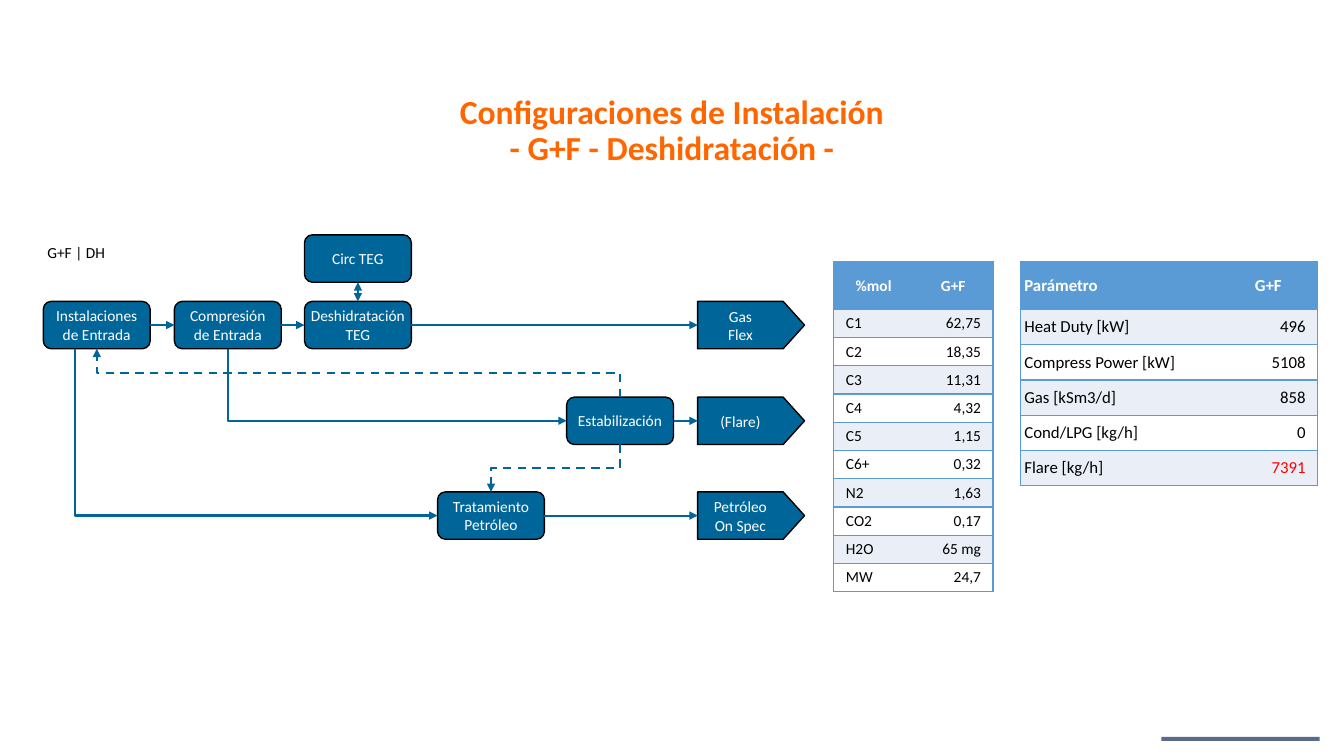
from dataclasses import dataclass

from lxml import etree
from pptx import Presentation
from pptx.dml.color import RGBColor
from pptx.enum.dml import MSO_LINE
from pptx.enum.shapes import MSO_CONNECTOR, MSO_SHAPE
from pptx.enum.text import MSO_ANCHOR, MSO_AUTO_SIZE, PP_ALIGN
from pptx.oxml.ns import qn
from pptx.util import Inches, Pt

PROCESS, FLAG = MSO_SHAPE.FLOWCHART_ALTERNATE_PROCESS, MSO_SHAPE.FLOWCHART_OFFPAGE_CONNECTOR
RECTANGLE = MSO_SHAPE.RECTANGLE
STRAIGHT, ELBOW = MSO_CONNECTOR.STRAIGHT, MSO_CONNECTOR.ELBOW
LEFT, CENTER, RIGHT = PP_ALIGN.LEFT, PP_ALIGN.CENTER, PP_ALIGN.RIGHT
MIDDLE, NO_FIT = MSO_ANCHOR.MIDDLE, MSO_AUTO_SIZE.NONE
DASH = MSO_LINE.DASH
TOP_SIDE, LEFT_SIDE, BOTTOM_SIDE, RIGHT_SIDE = range(4)


@dataclass(frozen=True)
class Theme:
    """Colours and type sizes of the slide."""
    font: str = "Calibri"
    title: str = "FF6600"
    teal: str = "006699"
    navy: str = "001C50"
    header: str = "5B9BD5"
    band: str = "EAEFF7"
    white: str = "FFFFFF"
    black: str = "000000"
    alert: str = "FF0000"
    title_size: int = 24
    body_size: int = 11
    parameter_size: int = 12


THEME = Theme()
BOX_WIDTH, BOX_HEIGHT = Inches(1.06), Inches(0.47)
MARGIN, WIDE_MARGIN = 0.04, 0.12
COMPOSITION = [("%mol", "G+F"), ("C1", "62,75"), ("C2", "18,35"), ("C3", "11,31"),
               ("C4", "4,32"), ("C5", "1,15"), ("C6+", "0,32"), ("N2", "1,63"),
               ("CO2", "0,17"), ("H2O", "65 mg"), ("MW", "24,7")]
PARAMETERS = [("Parámetro", "G+F"), ("Heat Duty [kW]", "496"), ("Compress Power [kW]", "5108"),
              ("Gas [kSm3/d]", "858"), ("Cond/LPG [kg/h]", "0"), ("Flare [kg/h]", "7391")]


def rgb(code):
    """Turn a hex code into a colour."""
    return RGBColor.from_string(code)


def write(frame, text, size, color, align=CENTER, bold=False):
    """Fill a text frame and format every run."""
    frame.text = text
    for para in frame.paragraphs:
        para.alignment = align
        for span in para.runs:
            span.font.name, span.font.size, span.font.bold = THEME.font, Pt(size), bold
            span.font.color.rgb = rgb(color)


def add_title(slide, left, top, width, height):
    """Place the two-line title."""
    title = slide.shapes.title
    title.left, title.top, title.width, title.height = left, top, width, height
    frame = title.text_frame
    frame.auto_size, frame.vertical_anchor = NO_FIT, MIDDLE
    frame.margin_top = frame.margin_bottom = Inches(MARGIN)
    write(frame, "", THEME.title_size, THEME.title)
    para = frame.paragraphs[0]
    para.text = "Configuraciones de Instalación\v- G+F - Deshidratación -"
    para.line_spacing = 0.9
    for span in para.runs:
        span.font.name, span.font.size, span.font.bold = THEME.font, Pt(THEME.title_size), True
        span.font.color.rgb = rgb(THEME.title)


def add_footer_bar(slide, left, top, width, height):
    """Draw the translucent bar at the foot of the page."""
    bar = slide.shapes.add_shape(RECTANGLE, left, top, width, height)
    bar.shadow.inherit = False
    bar.line.fill.background()
    bar.fill.solid()
    bar.fill.fore_color.rgb = rgb(THEME.navy)
    color = bar.element.spPr.find(qn("a:solidFill"))[0]
    etree.SubElement(color, qn("a:alpha")).set("val", "65000")


def add_node(slide, kind, text, left, top, width=BOX_WIDTH, height=BOX_HEIGHT):
    """Add one labelled shape of the diagram."""
    node = slide.shapes.add_shape(kind, left, top, width, height)
    node.shadow.inherit = False
    node.fill.solid()
    node.fill.fore_color.rgb = rgb(THEME.teal)
    node.line.color.rgb, node.line.width = rgb(THEME.black), Pt(1)
    frame = node.text_frame
    frame.word_wrap, frame.vertical_anchor = True, MIDDLE
    frame.margin_left = frame.margin_right = Inches(MARGIN)
    frame.margin_top = frame.margin_bottom = Inches(MARGIN)
    write(frame, text, THEME.body_size, THEME.white)
    return node


def add_flag(slide, text, left, top):
    """Add an output flag that points right."""
    shift = (BOX_WIDTH - BOX_HEIGHT) // 2
    flag = add_node(slide, FLAG, text, left + shift, top - shift, BOX_HEIGHT, BOX_WIDTH)
    flag.rotation = 270
    flag.element.txBody.find(qn("a:bodyPr")).set("vert", "vert")


def style_arrow(connector, dashed=False, both=False):
    """Give a connector its line, arrowheads and no shadow."""
    connector.line.color.rgb, connector.line.width = rgb(THEME.teal), Pt(1.5)
    if dashed:
        connector.line.dash_style = DASH
    properties = connector.element.spPr
    line = properties.find(qn("a:ln"))
    for end in ("a:headEnd", "a:tailEnd") if both else ("a:tailEnd",):
        etree.SubElement(line, qn(end)).set("type", "triangle")
    etree.SubElement(properties, qn("a:effectLst"))


def add_arrow(slide, start, start_side, target, end_side=LEFT_SIDE, both=False):
    """Join a box to another box, or to a flag's left edge at a given x."""
    middle = start.top + start.height // 2
    to_box = hasattr(target, "left")
    arrow = slide.shapes.add_connector(STRAIGHT, start.left, middle, 0 if to_box else target, middle)
    arrow.begin_connect(start, start_side)
    if to_box:
        arrow.end_connect(target, end_side)
    style_arrow(arrow, both=both)


def add_elbow(slide, start, end, preset, dashed=False):
    """Draw a bent arrow that leaves its start vertically."""
    across, down = end[0] - start[0], end[1] - start[1]
    width, height = abs(down), abs(across)
    left = (start[0] + end[0] - width) // 2
    top = (start[1] + end[1] - height) // 2
    elbow = slide.shapes.add_connector(ELBOW, left, top, left + width, top + height)
    elbow.element.spPr.find(qn("a:prstGeom")).set("prst", preset)
    transform = elbow.element.spPr.find(qn("a:xfrm"))
    transform.set("rot", "5400000" if across < 0 < down else "16200000")
    if across > 0:
        transform.set("flipH", "1")
    elif down < 0:
        transform.set("flipV", "1")
    style_arrow(elbow, dashed)


def add_diagram(slide, left, top):
    """Draw the process diagram from its top-left corner."""
    teg_row, gas_row, flare_row, oil_row = (top + Inches(y) for y in (0, 0.66, 1.61, 2.55))
    inlet_x, compress_x, dry_x, oil_x, stable_x, flag_x = (
        left + Inches(x) for x in (0, 1.3, 2.59, 3.91, 5.19, 6.49))
    inlet = add_node(slide, PROCESS, "Instalaciones de Entrada", inlet_x, gas_row)
    compress = add_node(slide, PROCESS, "Compresión de Entrada", compress_x, gas_row)
    dry = add_node(slide, PROCESS, "Deshidratación\nTEG", dry_x, gas_row)
    teg = add_node(slide, PROCESS, "Circ TEG", dry_x, teg_row)
    stable = add_node(slide, PROCESS, "Estabilización", stable_x, flare_row)
    oil = add_node(slide, PROCESS, "Tratamiento Petróleo", oil_x, oil_row)
    for text, row in (("Gas\nFlex", gas_row), ("(Flare)", flare_row), ("Petróleo\nOn Spec", oil_row)):
        add_flag(slide, text, flag_x, row)
    for start, target in ((inlet, compress), (compress, dry), (dry, flag_x), (stable, flag_x), (oil, flag_x)):
        add_arrow(slide, start, RIGHT_SIDE, target)
    add_arrow(slide, teg, BOTTOM_SIDE, dry, TOP_SIDE, both=True)

    half_width, half_height = BOX_WIDTH // 2, BOX_HEIGHT // 2
    gas_base, stable_middle = gas_row + BOX_HEIGHT, stable_x + half_width
    add_elbow(slide, (compress_x + half_width, gas_base), (stable_x, flare_row + half_height), "bentConnector2")
    add_elbow(slide, (inlet_x + Inches(0.31), gas_base), (oil_x, oil_row + half_height), "bentConnector2")
    add_elbow(slide, (stable_middle, flare_row), (inlet_x + half_width, gas_base), "bentConnector3", True)
    add_elbow(slide, (stable_middle, flare_row + BOX_HEIGHT), (oil_x + half_width, oil_row), "bentConnector3", True)


def style_cell(cell, fill, edges, left_margin=MARGIN, right_margin=MARGIN):
    """Set a cell's borders, fill, anchor and margins."""
    properties = cell._tc.get_or_add_tcPr()
    for edge in "LRTB":
        line = etree.SubElement(properties, qn("a:ln" + edge), w=str(Pt(1)))
        if edge in edges:
            paint = etree.SubElement(line, qn("a:solidFill"))
            etree.SubElement(paint, qn("a:srgbClr")).set("val", THEME.header)
        else:
            etree.SubElement(line, qn("a:noFill"))
    cell.fill.solid()
    cell.fill.fore_color.rgb = rgb(fill)
    cell.vertical_anchor = MIDDLE
    cell.margin_left, cell.margin_right = Inches(left_margin), Inches(right_margin)
    cell.margin_top = cell.margin_bottom = Inches(MARGIN)


def add_grid(slide, left, top, widths, heights):
    """Add an unstyled table with the given columns and rows."""
    table = slide.shapes.add_table(len(heights), len(widths), left, top,
                                   Inches(sum(widths)), Inches(sum(heights))).table
    table.first_row = table.horz_banding = False
    for column, width in zip(table.columns, widths):
        column.width = Inches(width)
    for row, height in zip(table.rows, heights):
        row.height = Inches(height)
    return table


def add_results(slide, left, top, rows, widths, row_height, size, label_margin, label_align, alert=None):
    """Add a banded table of labels and values."""
    heights = [0.47] + [row_height] * (len(rows) - 1)
    table = add_grid(slide, left, top, widths, heights)
    for r, row in enumerate(rows):
        for c, text in enumerate(row):
            cell, edges = table.cell(r, c), "RTB" if c else "LTB"
            if r == 0:
                style_cell(cell, THEME.header, edges)
                write(cell.text_frame, text, size, THEME.white, CENTER if c else label_align, True)
            else:
                style_cell(cell, THEME.band if r % 2 else THEME.white, edges,
                           label_margin, WIDE_MARGIN if c else label_margin)
                color = THEME.alert if text == alert else THEME.black
                write(cell.text_frame, text, size, color, RIGHT if c else LEFT)


def add_case_label(slide, left, top):
    """Add the one-cell table that names the case."""
    cell = add_grid(slide, left, top, [2.36], [0.35]).cell(0, 0)
    style_cell(cell, THEME.white, "")
    write(cell.text_frame, "G+F | DH", THEME.body_size, THEME.black, LEFT)


def main():
    """Build the slide and save it."""
    deck = Presentation()
    deck.slide_width, deck.slide_height = Inches(13.33), Inches(7.5)
    page = deck.slides.add_slide(deck.slide_layouts[5])
    add_footer_bar(page, Inches(11.52), Inches(7.31), Inches(1.57), Inches(0.04))
    add_title(page, Inches(0.76), Inches(0.91), Inches(11.81), Inches(0.79))
    add_case_label(page, Inches(0.43), Inches(2.34))
    add_diagram(page, Inches(0.43), Inches(2.33))
    add_results(page, Inches(8.27), Inches(2.6), COMPOSITION, [0.79, 0.79], 0.28,
                THEME.body_size, WIDE_MARGIN, CENTER)
    add_results(page, Inches(10.12), Inches(2.6), PARAMETERS, [1.97, 0.98], 0.35,
                THEME.parameter_size, MARGIN, LEFT, alert="7391")
    deck.save("out.pptx")


if __name__ == "__main__":
    main()
